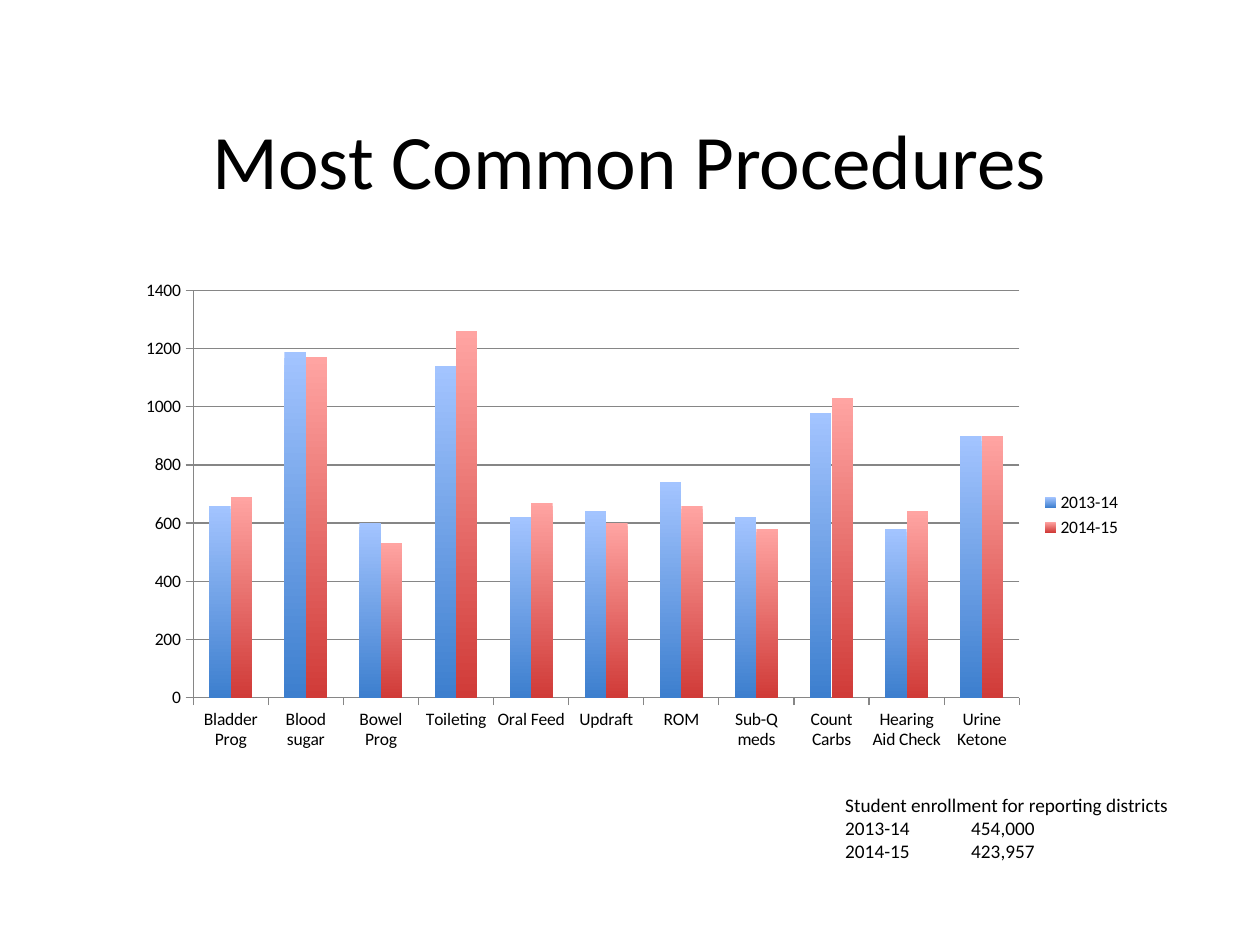
"""Build the slide comparing the most common procedures over two school years."""
from dataclasses import dataclass

from pptx import Presentation
from pptx.chart.data import CategoryChartData
from pptx.dml.color import RGBColor as Color
from pptx.enum.chart import XL_CHART_TYPE as ChartType
from pptx.enum.chart import XL_LEGEND_POSITION as LegendPosition
from pptx.enum.chart import XL_TICK_MARK as TickMark
from pptx.enum.text import MSO_ANCHOR as Anchor
from pptx.enum.text import MSO_AUTO_SIZE as AutoSize
from pptx.enum.text import PP_ALIGN as Align
from pptx.util import Inches, Pt


@dataclass(frozen=True)
class Theme:
    font: str = "Calibri"
    text: str = "000000"
    line: str = "868686"
    earlier_year: tuple[str, str] = ("A3C4FF", "3D7FCE")
    later_year: tuple[str, str] = ("FFA4A2", "D03B38")
    title_size: int = 44
    note_size: int = 11
    chart_size: int = 10


@dataclass(frozen=True)
class Area:
    """Place and size in percent of the slide."""
    left: float
    top: float
    width: float
    height: float

    def on_slide(self) -> tuple[int, int, int, int]:
        return (int(self.left * WIDTH / 100), int(self.top * HEIGHT / 100),
                int(self.width * WIDTH / 100), int(self.height * HEIGHT / 100))


@dataclass(frozen=True)
class YearSeries:
    name: str
    gradient: tuple[str, str]
    values: tuple[int, ...]


@dataclass(frozen=True)
class TextBlock:
    area: Area
    lines: tuple[str, ...]
    size: int
    align: Align = Align.LEFT
    anchor: Anchor = Anchor.TOP
    wrap: bool = True
    auto_size: AutoSize = AutoSize.NONE


THEME = Theme()
WIDTH, HEIGHT = Inches(10), Inches(7.5)
CHART_AREA = Area(10, 28.67, 80, 51.67)
PROCEDURES = ("Bladder Prog", "Blood sugar", "Bowel Prog", "Toileting", "Oral Feed", "Updraft",
              "ROM", "Sub-Q meds", "Count Carbs", "Hearing Aid Check", "Urine Ketone")
YEARS = (
    YearSeries("2013-14", THEME.earlier_year,
               (660, 1190, 600, 1140, 620, 640, 740, 620, 980, 580, 900)),
    YearSeries("2014-15", THEME.later_year,
               (690, 1170, 530, 1260, 670, 600, 660, 580, 1030, 640, 900)),
)
TEXT_BLOCKS = (
    TextBlock(Area(10, 8.4, 80, 16.8), ("Most Common Procedures",),
              THEME.title_size, Align.CENTER, Anchor.MIDDLE),
    TextBlock(Area(66.1, 83.3, 29.4, 8.8),
              ("Student enrollment for reporting districts", "2013-14\t454,000", "2014-15\t423,957"),
              THEME.note_size, wrap=False, auto_size=AutoSize.SHAPE_TO_FIT_TEXT),
)


def style_font(font, size: int) -> None:
    font.name = THEME.font
    font.size = Pt(size)
    font.color.rgb = Color.from_string(THEME.text)


def style_line(line) -> None:
    line.color.rgb = Color.from_string(THEME.line)
    line.width = Pt(0.75)


def add_text(slide, block: TextBlock) -> None:
    frame = slide.shapes.add_textbox(*block.area.on_slide()).text_frame
    frame.word_wrap = block.wrap
    frame.auto_size = block.auto_size
    frame.vertical_anchor = block.anchor
    for index, line in enumerate(block.lines):
        paragraph = frame.add_paragraph() if index else frame.paragraphs[0]
        paragraph.alignment = block.align
        run = paragraph.add_run()
        run.text = line
        style_font(run.font, block.size)


def add_procedure_chart(slide, area: Area, years: tuple[YearSeries, ...]) -> None:
    data = CategoryChartData()
    data.categories = PROCEDURES
    for year in years:
        data.add_series(year.name, year.values)
    chart = slide.shapes.add_chart(ChartType.COLUMN_CLUSTERED, *area.on_slide(), data).chart
    style_font(chart.font, THEME.chart_size)
    chart.has_title = False
    chart.has_legend = True
    chart.legend.position = LegendPosition.RIGHT
    chart.legend.include_in_layout = False

    for axis in (chart.category_axis, chart.value_axis):
        axis.major_tick_mark = TickMark.OUTSIDE
        axis.minor_tick_mark = TickMark.NONE
        style_line(axis.format.line)
    value_axis = chart.value_axis
    value_axis.minimum_scale, value_axis.maximum_scale, value_axis.major_unit = 0, 1400, 200
    value_axis.has_major_gridlines = True
    style_line(value_axis.major_gridlines.format.line)

    plot = chart.plots[0]
    plot.gap_width, plot.overlap, plot.vary_by_categories = 150, 0, False
    for series, year in zip(plot.series, years):
        series.invert_if_negative = False
        fill = series.format.fill
        fill.gradient()
        fill.gradient_angle = 270
        for stop, color in zip(fill.gradient_stops, year.gradient):
            stop.color.rgb = Color.from_string(color)


def main() -> None:
    presentation = Presentation()
    presentation.slide_width, presentation.slide_height = WIDTH, HEIGHT
    slide = presentation.slides.add_slide(presentation.slide_layouts[6])
    add_procedure_chart(slide, CHART_AREA, YEARS)
    for block in TEXT_BLOCKS:
        add_text(slide, block)
    presentation.save("out.pptx")


if __name__ == "__main__":
    main()
